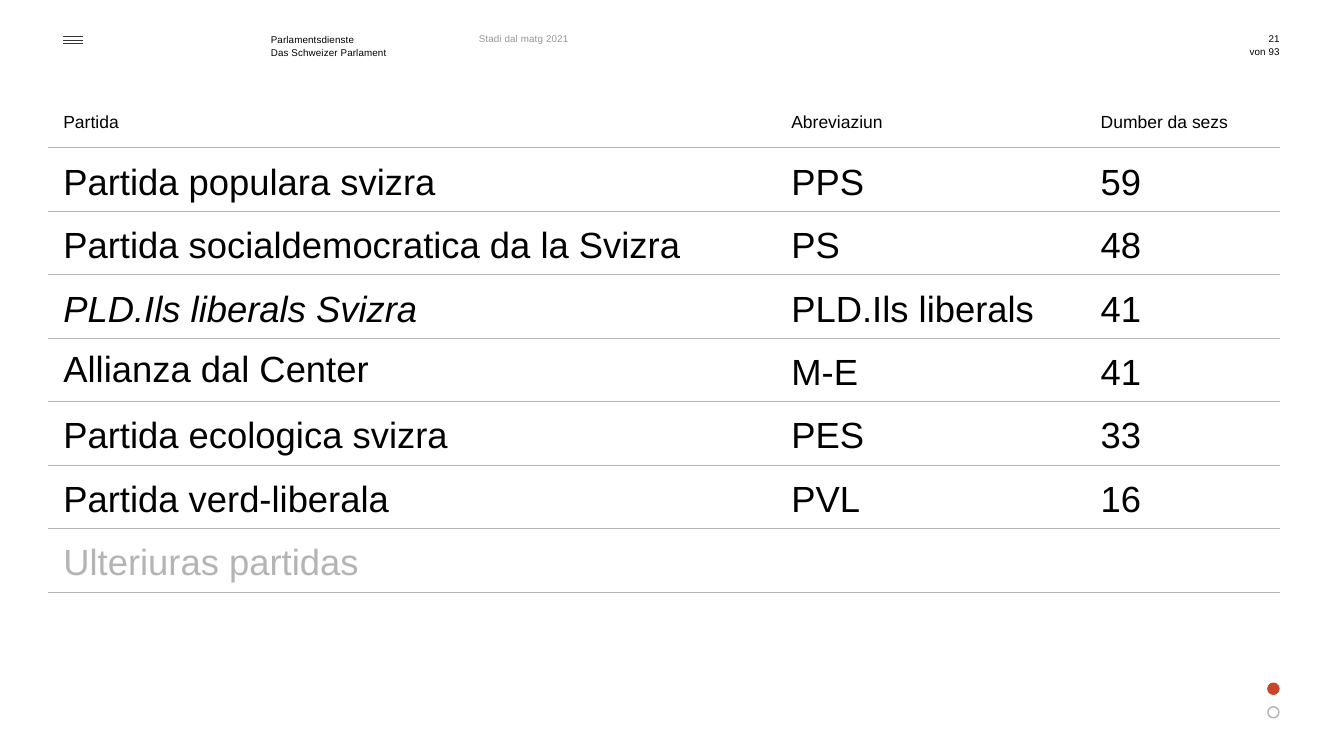
from lxml import etree
from pptx import Presentation
from pptx.dml.color import RGBColor
from pptx.enum import shapes, text
from pptx.oxml import ns
from pptx.util import Pt

BLACK = RGBColor(0x00, 0x00, 0x00)
CHARCOAL = RGBColor(0x34, 0x34, 0x34)
GRAY = RGBColor(0x96, 0x96, 0x96)
SILVER = RGBColor(0xB4, 0xB4, 0xB4)
RED = RGBColor(0xC8, 0x46, 0x28)
FONT = "Arial"
NO_STYLE_NO_GRID = "{2D5ABB26-0587-4C30-8999-92F81FD0307C}"

HEADINGS = ("Partida", "Abreviaziun", "Dumber da sezs")
PARTIES = (
    ("Partida populara svizra", "PPS", "59"),
    ("Partida socialdemocratica da la Svizra", "PS", "48"),
    ("PLD.Ils liberals Svizra", "PLD.Ils liberals", "41"),
    ("Allianza dal Center", "M-E", "41"),
    ("Partida ecologica svizra", "PES", "33"),
    ("Partida verd-liberala", "PVL", "16"),
    ("Ulteriuras partidas", "", ""),
)
ITALIC_PARTY = "PLD.Ils liberals Svizra"
SINGLE_SPACED_PARTY = "Allianza dal Center"
MUTED_PARTY = "Ulteriuras partidas"
COLUMN_WIDTHS = (520, 221, 139)
HEADING_HEIGHT, ROW_HEIGHT = 28.3, 45.36


def set_font(paragraph, size, color):
    paragraph.font.name = FONT
    paragraph.font.size = Pt(size)
    paragraph.font.color.rgb = color


def add_label(slide, left, top, width, height, lines, color=BLACK,
              align=text.PP_ALIGN.LEFT, spacing=1.0):
    """Add small, slightly letterspaced text without insets."""
    frame = slide.shapes.add_textbox(
        Pt(left), Pt(top), Pt(width), Pt(height)).text_frame
    frame.word_wrap = True
    frame.margin_left = frame.margin_right = 0
    frame.margin_top = frame.margin_bottom = 0
    frame.text = "\n".join(lines)
    for paragraph in frame.paragraphs:
        paragraph.alignment = align
        paragraph.line_spacing = spacing
        set_font(paragraph, 7, color)
        for run in paragraph.runs:
            run.font._element.set("spc", "10")


def add_menu_icon(slide, left, top, width, gap):
    for row in range(3):
        y = Pt(top + row * gap)
        bar = slide.shapes.add_connector(
            shapes.MSO_CONNECTOR.STRAIGHT, Pt(left), y, Pt(left + width), y)
        bar.line.color.rgb = CHARCOAL
        bar.line.width = Pt(0.4)
        etree.SubElement(bar._element.spPr, ns.qn("a:effectLst"))


def add_header(slide, left, top, width):
    add_menu_icon(slide, left, top + 2.9, 14.4, 2.5)
    add_label(slide, left + 148.5, top, 94, 19,
              ("Parlamentsdienste", "Das Schweizer Parlament"), spacing=1.1)
    add_label(slide, left + 297, top, 87, 9, ("Stadi dal matg 2021",), GRAY)
    for row, page_text in enumerate(("21", "von 93")):
        add_label(slide, left + width - 32, top + row * 9.3, 32, 9,
                  (page_text,), align=text.PP_ALIGN.RIGHT)


def add_rule(cell, side):
    """Draw a thin border on one side of a cell: T or B."""
    line = etree.SubElement(cell._tc.get_or_add_tcPr(),
                            ns.qn(f"a:ln{side}"), w=str(Pt(0.5)))
    fill = etree.SubElement(line, ns.qn("a:solidFill"))
    etree.SubElement(fill, ns.qn("a:srgbClr"), val=str(SILVER))


def fill_cell(cell, content, is_heading):
    cell.margin_left = Pt(11.3)
    cell.margin_right = Pt(7.2 if is_heading else 5.7)
    cell.margin_top = Pt(3.6 if is_heading else 8.5)
    cell.margin_bottom = Pt(3.6 if is_heading else 0)
    cell.text = content
    paragraph = cell.text_frame.paragraphs[0]
    set_font(paragraph, 12.5 if is_heading else 26,
             SILVER if content == MUTED_PARTY else BLACK)
    if not is_heading and content != SINGLE_SPACED_PARTY:
        paragraph.line_spacing = 1.07
    if content == ITALIC_PARTY:
        paragraph.font.italic = True


def add_party_table(slide, left, top):
    rows = (HEADINGS, *PARTIES, ("", "", ""))
    last = len(rows) - 1
    frame = slide.shapes.add_table(
        len(rows), len(HEADINGS), Pt(left), Pt(top), Pt(sum(COLUMN_WIDTHS)),
        Pt(HEADING_HEIGHT + last * ROW_HEIGHT))
    table = frame.table
    table.first_row = table.horz_banding = False
    table._tbl.tblPr.find(ns.qn("a:tableStyleId")).text = NO_STYLE_NO_GRID
    for column, width in zip(table.columns, COLUMN_WIDTHS):
        column.width = Pt(width)
    for row, contents in enumerate(rows):
        table.rows[row].height = Pt(ROW_HEIGHT if row else HEADING_HEIGHT)
        for column, content in enumerate(contents):
            cell = table.cell(row, column)
            fill_cell(cell, content, row == 0)
            if row > 0:
                add_rule(cell, "T")
            if row < last:
                add_rule(cell, "B")
            cell.fill.background()


def add_progress_dots(slide, left, top, size, gap):
    for row, color in enumerate((RED, SILVER)):
        dot = slide.shapes.add_shape(
            shapes.MSO_SHAPE.OVAL, Pt(left), Pt(top + row * gap),
            Pt(size), Pt(size))
        dot.shadow.inherit = False
        dot.line.color.rgb = color
        dot.line.width = Pt(1)
        if color == RED:
            dot.fill.solid()
            dot.fill.fore_color.rgb = color
        else:
            dot.fill.background()


def main():
    presentation = Presentation()
    presentation.slide_width, presentation.slide_height = Pt(960), Pt(540)
    slide = presentation.slides.add_slide(presentation.slide_layouts[6])
    add_header(slide, 45, 23.2, 869)
    add_party_table(slide, 34, 77)
    add_progress_dots(slide, 905.6, 488, 7.9, 16.8)
    presentation.save("out.pptx")


if __name__ == "__main__":
    main()
